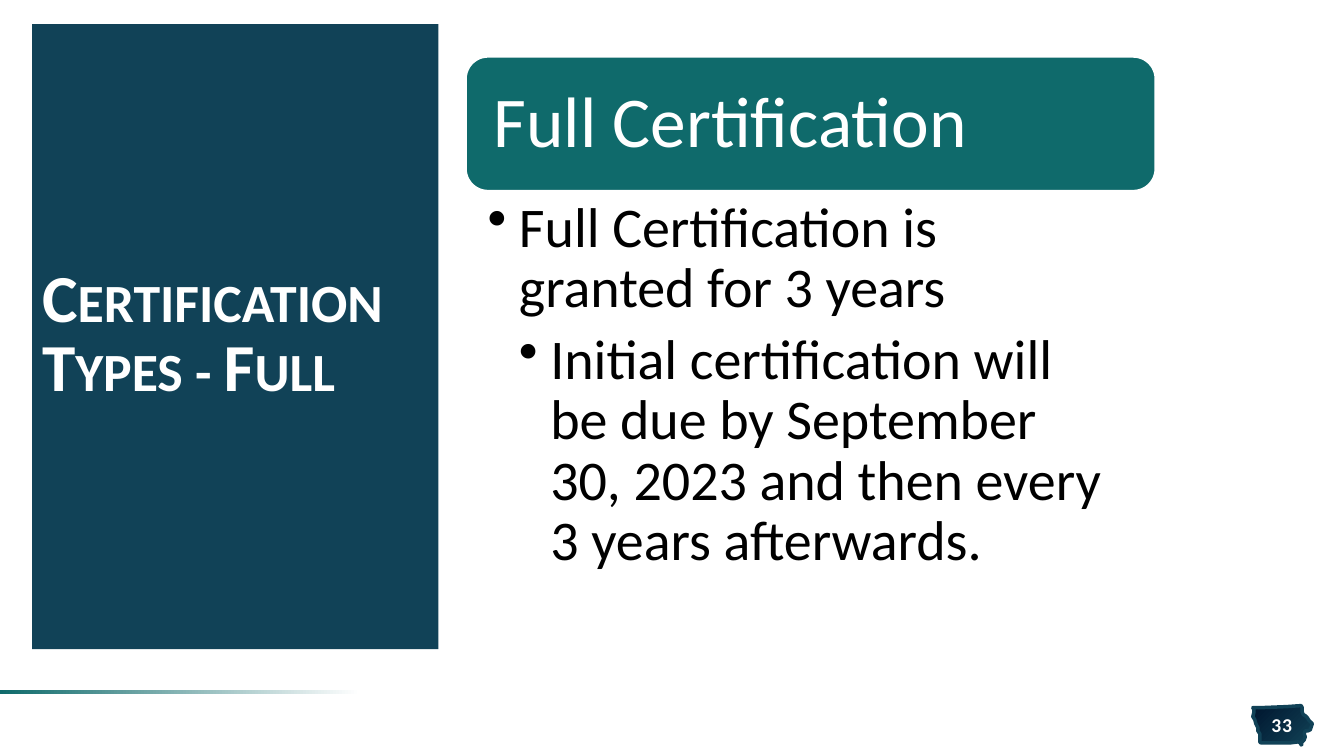
from lxml.etree import SubElement
from pptx import Presentation
from pptx.dml.color import RGBColor
from pptx.enum.shapes import MSO_SHAPE as Preset
from pptx.enum.text import MSO_ANCHOR as Anchor, PP_ALIGN as Align
from pptx.oxml.ns import qn
from pptx.util import Cm, Pt

NAVY = RGBColor(0x11, 0x42, 0x57)
MIDNIGHT = RGBColor(0x00, 0x16, 0x2E)
TEAL = RGBColor(0x0F, 0x6A, 0x6B)
WHITE = RGBColor(0xFF, 0xFF, 0xFF)
BLACK = RGBColor(0x00, 0x00, 0x00)

FONT = "Calibri"
BULLET_INDENT = 0.79
HUNDREDTH_INCH = Cm(0.0254)
STATE_OUTLINE = [
    (1291, 700), (1277, 701), (1253, 702), (1243, 702), (1244, 704),
    (1244, 707), (1243, 711), (1245, 714), (1246, 718), (1248, 722),
    (1248, 725), (1250, 728), (1250, 732), (1250, 736), (1251, 737),
    (1280, 737), (1288, 736), (1290, 737), (1291, 739), (1292, 738),
    (1291, 737), (1294, 734), (1295, 731), (1294, 728), (1295, 725),
    (1298, 725), (1300, 724), (1301, 721), (1302, 718), (1299, 715),
    (1297, 712), (1295, 710), (1293, 709), (1292, 706), (1292, 702),
]


def set_gradient(shape, stops, angle):
    shape.fill.gradient()
    shape.fill.gradient_angle = angle
    for stop, (position, color) in zip(shape.fill.gradient_stops, stops):
        stop.position = position
        stop.color.rgb = color


def add_block(slide, preset, box, color=None, border=None):
    shape = slide.shapes.add_shape(preset, *map(Cm, box))
    shape.shadow.inherit = False
    if color is not None:
        shape.fill.solid()
        shape.fill.fore_color.rgb = color
    if border is None:
        shape.line.fill.background()
    else:
        shape.line.color.rgb = border
        shape.line.width = Pt(2)
    return shape


def add_text_box(slide, box):
    return slide.shapes.add_textbox(*map(Cm, box))


def set_frame(shape, insets, anchor=Anchor.MIDDLE):
    frame = shape.text_frame
    frame.word_wrap = True
    frame.vertical_anchor = anchor
    (frame.margin_left, frame.margin_top,
     frame.margin_right, frame.margin_bottom) = map(Cm, insets)
    return frame


def write(frame, text, size, color=WHITE, bold=False, align=Align.LEFT,
          spacing=1.0, after=0, bullet_level=0, small_caps=False, tracking=0):
    paragraph = frame.paragraphs[0]
    if paragraph.runs:
        paragraph = frame.add_paragraph()
    if bullet_level:
        paragraph.level = bullet_level
        properties = paragraph._p.get_or_add_pPr()
        properties.set("marL", str(Cm(BULLET_INDENT * bullet_level)))
        properties.set("indent", str(-Cm(BULLET_INDENT)))
        SubElement(properties, qn("a:buChar")).set("char", "•")
    paragraph.alignment = align
    paragraph.line_spacing = spacing
    paragraph.space_after = Pt(after)
    run = paragraph.add_run()
    run.text = text
    run.font.name = FONT
    run.font.size = Pt(size)
    run.font.bold = bold
    run.font.color.rgb = color
    run_properties = run._r.get_or_add_rPr()
    if small_caps:
        run_properties.set("cap", "small")
    if tracking:
        run_properties.set("spc", str(int(tracking * 100)))


def add_state_badge(slide, number):
    builder = slide.shapes.build_freeform(*STATE_OUTLINE[0], scale=HUNDREDTH_INCH)
    builder.add_line_segments(STATE_OUTLINE[1:], close=True)
    badge = builder.convert_to_shape()
    badge.shadow.inherit = False
    set_gradient(badge, [(0, MIDNIGHT), (1, NAVY)], 315)
    badge.line.color.rgb = NAVY
    badge.line.width = Pt(2.5)
    label = add_text_box(slide, (31.65, 17.98, 1.3, 0.58))
    write(set_frame(label, (0, 0.13, 0, 0.13)), number, 14,
          bold=True, align=Align.CENTER, tracking=0.5)


def add_footer_rule(slide):
    rule = add_block(slide, Preset.RECTANGLE, (0, 17.4, 9.65, 0.08))
    set_gradient(rule, [(0.06, WHITE), (1, TEAL)], 180)


def add_title_panel(slide, title):
    panel = add_block(slide, Preset.RECTANGLE, (0.81, 0.61, 10.24, 15.75), NAVY)
    write(set_frame(panel, (0.25, 0.13, 0.25, 0.13)), title, 48,
          bold=True, spacing=0.85, small_caps=True)


def add_topic(slide, heading, bullets):
    add_block(slide, Preset.ROUNDED_RECTANGLE, (11.73, 1.42, 17.4, 3.4), TEAL, WHITE)
    heading_box = add_text_box(slide, (11.91, 1.6, 17.07, 3.07))
    write(set_frame(heading_box, (0.53,) * 4), heading, 51, spacing=0.9)
    body = add_text_box(slide, (11.73, 4.83, 17.4, 10.26))
    frame = set_frame(body, (0.56, 0.18, 1.02, 0.18), Anchor.TOP)
    for level, text in enumerate(bullets, start=1):
        write(frame, text, 40, color=BLACK, spacing=0.9, after=8, bullet_level=level)


def main():
    presentation = Presentation()
    presentation.slide_width = Cm(33.87)
    presentation.slide_height = Cm(19.05)
    slide = presentation.slides.add_slide(presentation.slide_layouts[6])
    add_footer_rule(slide)
    add_title_panel(slide, "Certification Types - Full")
    add_state_badge(slide, "33")
    add_topic(slide, "Full Certification", [
        "Full Certification is granted for 3 years",
        "Initial certification will be due by September 30, 2023 "
        "and then every 3 years afterwards.",
    ])
    presentation.save("out.pptx")


if __name__ == "__main__":
    main()
